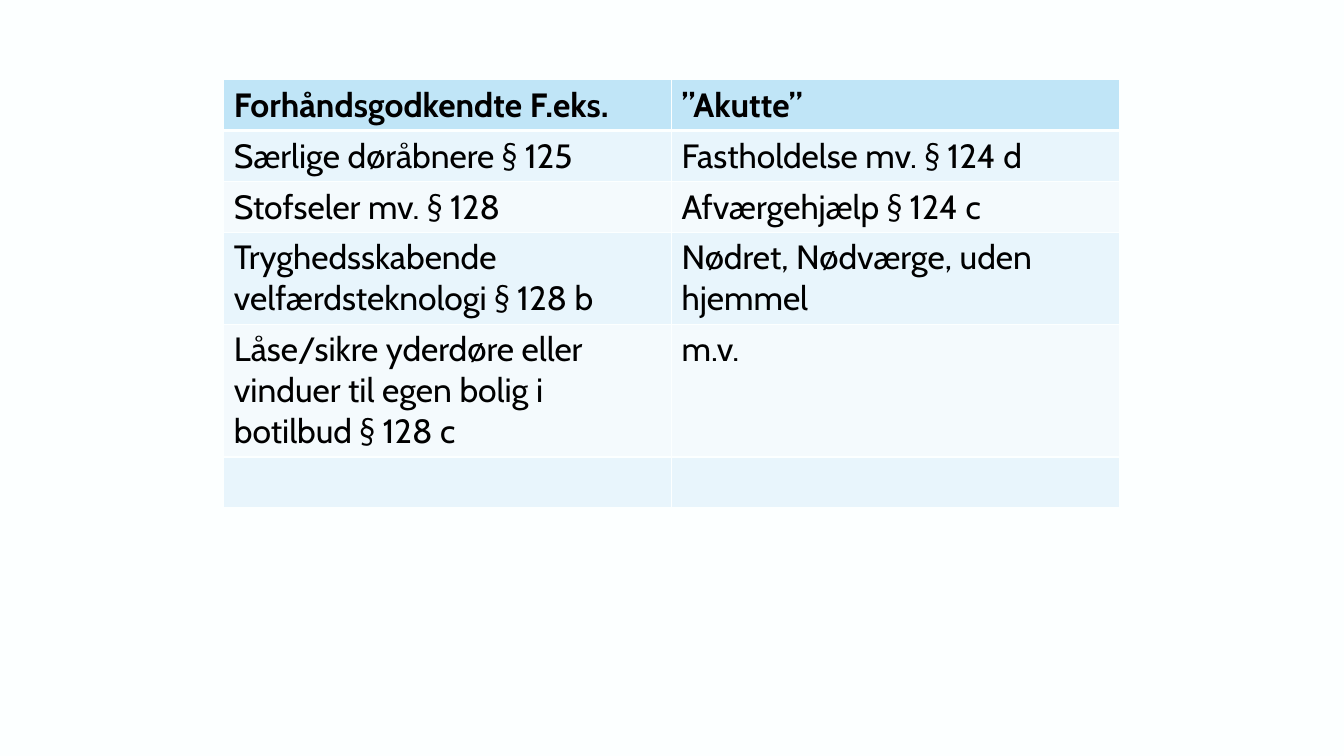
"""Build a slide with a table of pre-approved and acute measures."""
from lxml.etree import SubElement
from pptx import Presentation
from pptx.dml.color import RGBColor
from pptx.oxml.ns import qn
from pptx.util import Inches, Pt


def paint(fill, color):
    fill.solid()
    fill.fore_color.rgb = RGBColor.from_string(color)


def edge(cell, side, width, color):
    line = SubElement(cell._tc.get_or_add_tcPr(), qn(f"a:ln{side}"), w=str(Pt(width)))
    solid = SubElement(line, qn("a:solidFill"))
    SubElement(solid, qn("a:srgbClr"), val=color)


PAPER = "FCFFFF"
HEAD = "C0E5F7"
BANDS = ["F4FAFD", "E8F5FC"]
ROWS = [
    ("Forhåndsgodkendte F.eks.", "”Akutte”"),
    ("Særlige døråbnere § 125", "Fastholdelse mv. § 124 d"),
    ("Stofseler mv. § 128", "Afværgehjælp § 124 c"),
    ("Tryghedsskabende velfærdsteknologi § 128 b", "Nødret, Nødværge, uden hjemmel"),
    ("Låse/sikre yderdøre eller vinduer til egen bolig i botilbud § 128 c", "m.v."),
    ("", ""),
]

deck = Presentation()
deck.slide_width = Inches(13.33)
deck.slide_height = Inches(7.5)
slide = deck.slides.add_slide(deck.slide_layouts[6])
paint(slide.background.fill, PAPER)

frame = slide.shapes.add_table(
    len(ROWS), 2, Inches(2.22), Inches(0.79), Inches(8.89), Inches(2.55)
)
table = frame.table
for col in table.columns:
    col.width = Inches(4.44)
for row in table.rows:
    row.height = Inches(0.41)
table.rows[len(ROWS) - 1].height = Inches(0.5)

for i, texts in enumerate(ROWS):
    for j, text in enumerate(texts):
        cell = table.cell(i, j)
        for side in "LRTB":
            thick = (i == 0 and side == "B") or (i == 1 and side == "T")
            edge(cell, side, 3 if thick else 1, PAPER)
        paint(cell.fill, BANDS[i % 2] if i else HEAD)
        if text:
            run = cell.text_frame.paragraphs[0].add_run()
            run.text = text
            style = {"name": "Cabin", "size": Pt(24), "bold": i == 0}
            for key, value in style.items():
                setattr(run.font, key, value)
            paint(run.font.fill, "000000")

deck.save("out.pptx")
